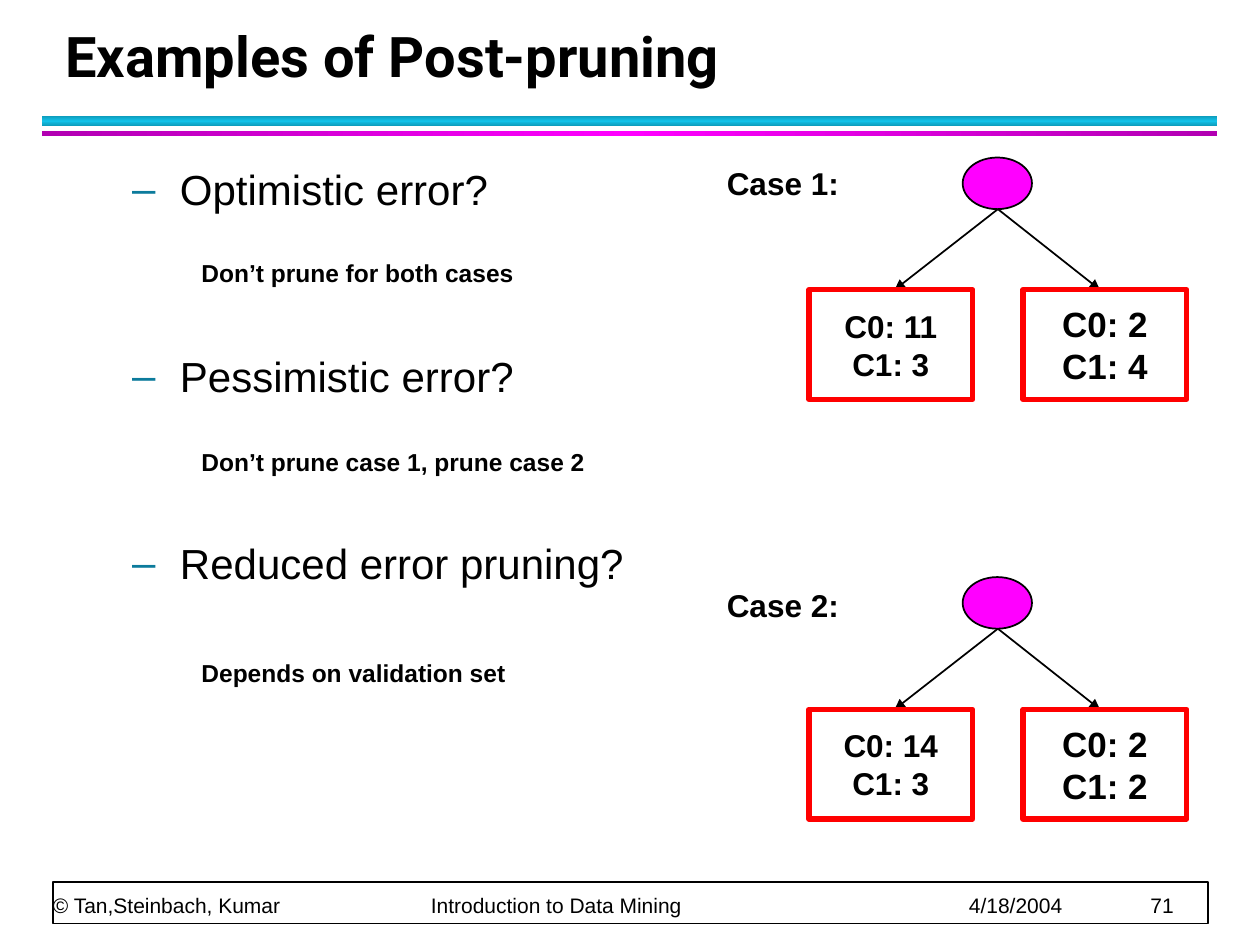
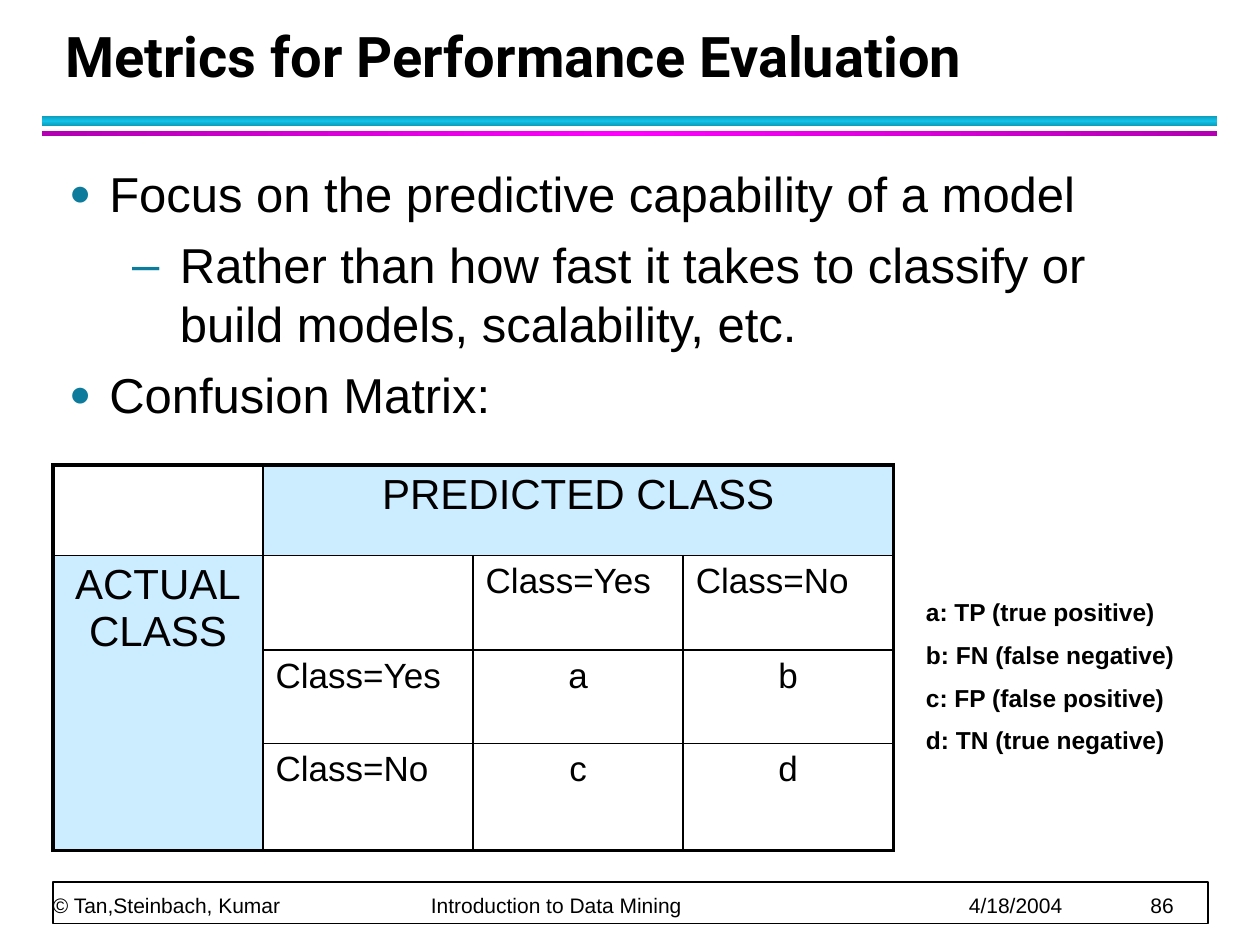
from pptx import Presentation
from pptx.dml.color import RGBColor
from pptx.enum.shapes import MSO_CONNECTOR as Conn, MSO_SHAPE as Kind
from pptx.enum.text import MSO_ANCHOR as Anchor, PP_ALIGN as Align
from pptx.oxml import parse_xml as to_xml
from pptx.oxml.ns import nsdecls
from pptx.util import Inches, Pt

BLACK = RGBColor(0, 0, 0)
WHITE = RGBColor(255, 255, 255)
RED = RGBColor(255, 0, 0)
PINK = RGBColor(255, 0, 255)
PLUM = RGBColor(0xB2, 0, 0xB2)
CYAN = RGBColor(0x12, 0xC2, 0xE9)
TEAL = RGBColor(0x0E, 0x9B, 0xBA)
MARK = RGBColor(0x0C, 0x7B, 0x9C)
PALE = RGBColor(0xCC, 0xEC, 0xFF)
NS = nsdecls("a")
BULLETS = [("●", 75, 0.32, 0.32), ("–", 100, 0.88, 0.38)]


def add_xml(node, xml):
    node.append(to_xml(xml))


def add_mark(par, level):
    char, size, left, hang = BULLETS[level]
    props = par._p.get_or_add_pPr()
    props.set("marL", str(Inches(left)))
    props.set("indent", str(-Inches(hang)))
    props.set("lvl", str(level))
    add_xml(props, f'<a:buClr {NS}><a:srgbClr val="{MARK}"/></a:buClr>')
    add_xml(props, f'<a:buSzPct {NS} val="{size * 1000}"/>')
    add_xml(props, f'<a:buFont {NS} typeface="Arial"/>')
    add_xml(props, f'<a:buChar {NS} char="{char}"/>')


def write(frame, text, size=14, bold=False, font="Arial", align=Align.LEFT,
          before=0, after=0, pitch=None, level=None, more=False):
    par = frame.add_paragraph() if more else frame.paragraphs[0]
    par.text = text
    par.alignment = align
    par.space_before, par.space_after = Pt(before), Pt(after)
    if pitch:
        par.line_spacing = Pt(pitch)
    if level is not None:
        add_mark(par, level)
    for run in par.runs:
        run.font.name, run.font.size = font, Pt(size)
        run.font.bold, run.font.color.rgb = bold, BLACK
    return par


def add_box(slide, left, top, width, height, anchor=Anchor.TOP):
    box = slide.shapes.add_textbox(*map(Inches, (left, top, width, height)))
    frame = box.text_frame
    frame.word_wrap = True
    frame.vertical_anchor = anchor
    return frame


def add_note(slide, text, left, top, width, height=0.33, size=14):
    write(add_box(slide, left, top, width, height), text, size=size, bold=True)


def add_form(slide, kind, left, top, width, height, fill=None, line=None, weight=1):
    form = slide.shapes.add_shape(kind, *map(Inches, (left, top, width, height)))
    form.shadow.inherit = False
    if fill is None:
        form.fill.background()
    else:
        form.fill.solid()
        form.fill.fore_color.rgb = fill
    if line is None:
        form.line.fill.background()
    else:
        form.line.color.rgb = line
        form.line.width = Pt(weight)
    return form


def add_band(slide, top, height, edge, mid, angle):
    band = add_form(slide, Kind.RECTANGLE, 0.33, top, 9.33, height)
    stops = "".join(
        f'<a:gs pos="{pos * 1000}"><a:srgbClr val="{tone}"/></a:gs>'
        for pos, tone in ((0, edge), (50, mid), (100, edge)))
    props = band._element.spPr
    blank = props.find("{*}noFill")
    props.replace(blank, to_xml(
        f'<a:gradFill {NS} rotWithShape="1"><a:gsLst>{stops}</a:gsLst>'
        f'<a:lin ang="{angle * 60000}" scaled="0"/></a:gradFill>'))


def add_foot(slide, page):
    add_form(slide, Kind.RECTANGLE, 0.42, 7, 9.17, 0.33, WHITE, BLACK)
    frame = add_box(slide, 0.42, 7, 9.15, 0.28, Anchor.BOTTOM)
    frame.margin_left = frame.margin_right = 0
    frame.margin_top = frame.margin_bottom = 0
    parts = ("© Tan,Steinbach, Kumar", "Introduction to Data Mining", "4/18/2004", str(page))
    par = write(frame, "\t".join(parts), size=12, pitch=20)
    tabs = "".join(f'<a:tab pos="{Inches(pos)}" algn="l"/>' for pos in (3, 7.27, 8.71))
    add_xml(par._p.get_or_add_pPr(), f"<a:tabLst {NS}>{tabs}</a:tabLst>")


def add_page(deck, title, page):
    slide = deck.slides.add_slide(deck.slide_layouts[6])
    add_band(slide, 0.92, 0.08, TEAL, CYAN, 90)
    add_band(slide, 1.04, 0.04, PLUM, PINK, 0)
    add_foot(slide, page)
    frame = add_box(slide, 0.42, 0.17, 9.06, 0.58, Anchor.BOTTOM)
    write(frame, title, size=32, bold=True, font="Roboto", pitch=36)
    return slide


def add_arrow(slide, *ends):
    arrow = slide.shapes.add_connector(Conn.STRAIGHT, *map(Inches, ends))
    arrow.line.color.rgb = BLACK
    arrow.line.width = Pt(1)
    add_xml(arrow.line._get_or_add_ln(), f'<a:tailEnd {NS} type="triangle"/>')
    add_xml(arrow._element.spPr, f"<a:effectLst {NS}/>")


def add_tree(slide, top, leaves):
    add_form(slide, Kind.OVAL, 7.64, top, 0.55, 0.41, PINK, BLACK)
    base = top + 1.05
    for tip in (7.1, 8.73):
        add_arrow(slide, 7.92, top + 0.41, tip, base)
    for left, size, counts in zip((6.42, 8.12), (18, 20), leaves):
        leaf = add_form(slide, Kind.RECTANGLE, left, base, 1.3, 0.87, line=RED, weight=3)
        frame = leaf.text_frame
        frame.word_wrap = False
        frame.vertical_anchor = Anchor.MIDDLE
        for row, count in enumerate(counts):
            write(frame, f"C{row}: {count}", size=size, bold=True,
                  align=Align.CENTER, more=row > 0)


def add_edges(cell, row, col):
    outer = {"L": col == 0, "R": col + cell.span_width == 4,
             "T": row == 0, "B": row + cell.span_height == 4}
    props = cell._tc.get_or_add_tcPr()
    for side, thick in outer.items():
        add_xml(props, f'<a:ln{side} {NS} w="{Pt(2.25 if thick else 1)}"><a:solidFill>'
                       f'<a:srgbClr val="{BLACK}"/></a:solidFill></a:ln{side}>')


def add_grid(slide):
    spot = map(Inches, (0.42, 3.69, 6.67, 3.06))
    grid = slide.shapes.add_table(4, 4, *spot).table
    grid.first_row = grid.horz_banding = False
    for col in grid.columns:
        col.width = Inches(6.67 / 4)
    for row, height in zip(grid.rows, (0.72, 0.75, 0.74, 0.85)):
        row.height = Inches(height)
    grid.cell(0, 1).merge(grid.cell(0, 3))
    grid.cell(1, 0).merge(grid.cell(3, 0))
    words = [["", "PREDICTED CLASS", "", ""],
             ["ACTUAL\vCLASS", "", "Class=Yes", "Class=No"],
             ["", "Class=Yes", "a", "b"],
             ["", "Class=No", "c", "d"]]
    for row, line in enumerate(words):
        for col, text in enumerate(line):
            cell = grid.cell(row, col)
            add_edges(cell, row, col)
            head = cell.is_merge_origin
            if head:
                cell.fill.solid()
                cell.fill.fore_color.rgb = PALE
            else:
                cell.fill.background()
            if text:
                side = Align.LEFT if text.startswith("Class") else Align.CENTER
                write(cell.text_frame, text, size=24 if head else 20, align=side,
                      before=60 if col == 0 else 2, after=4)


def add_prune(deck):
    slide = add_page(deck, "Examples of Post-pruning", 71)
    frame = add_box(slide, 0.45, 1.25, 5.05, 5.67)
    asks = ("Optimistic error?", "Pessimistic error?", "Reduced error pruning?")
    for num, text in enumerate(asks):
        write(frame, text, size=24, level=1, before=78 if num else 2.4, more=num > 0)
    cases = [(1.25, 1.25, ((11, 3), (2, 4))), (4.58, 4.6, ((14, 3), (2, 2)))]
    for num, (top, tag, leaves) in enumerate(cases, 1):
        add_tree(slide, top, leaves)
        add_note(slide, f"Case {num}:", 5.67, tag, 1.33, 0.4, 18)
    add_note(slide, "Don’t prune for both cases", 1.5, 2, 3.08)
    add_note(slide, "Don’t prune case 1, prune case 2", 1.5, 3.5, 3.58)
    add_note(slide, "Depends on validation set", 1.5, 5.17, 3.58)


def add_metrics(deck):
    slide = add_page(deck, "Metrics for Performance Evaluation", 86)
    frame = add_box(slide, 0.45, 1.25, 9.1, 5.67)
    points = [(0, "Focus on the predictive capability of a model"),
              (1, "Rather than how fast it takes to classify or build models, scalability, etc."),
              (0, "Confusion Matrix:")]
    for num, (level, text) in enumerate(points):
        write(frame, text, size=28, level=level, before=3, after=4, more=num > 0)
    add_grid(slide)
    frame = add_box(slide, 7.25, 4.69, 2.42, 1.38)
    terms = ("a: TP (true positive)", "b: FN (false negative)",
             "c: FP (false positive)", "d: TN (true negative)")
    for num, text in enumerate(terms):
        write(frame, text, bold=True, before=7.6 if num else 0, more=num > 0)


def main():
    deck = Presentation()
    deck.slide_width, deck.slide_height = Inches(10), Inches(7.5)
    add_prune(deck)
    add_metrics(deck)
    deck.save("out.pptx")


if __name__ == "__main__":
    main()
